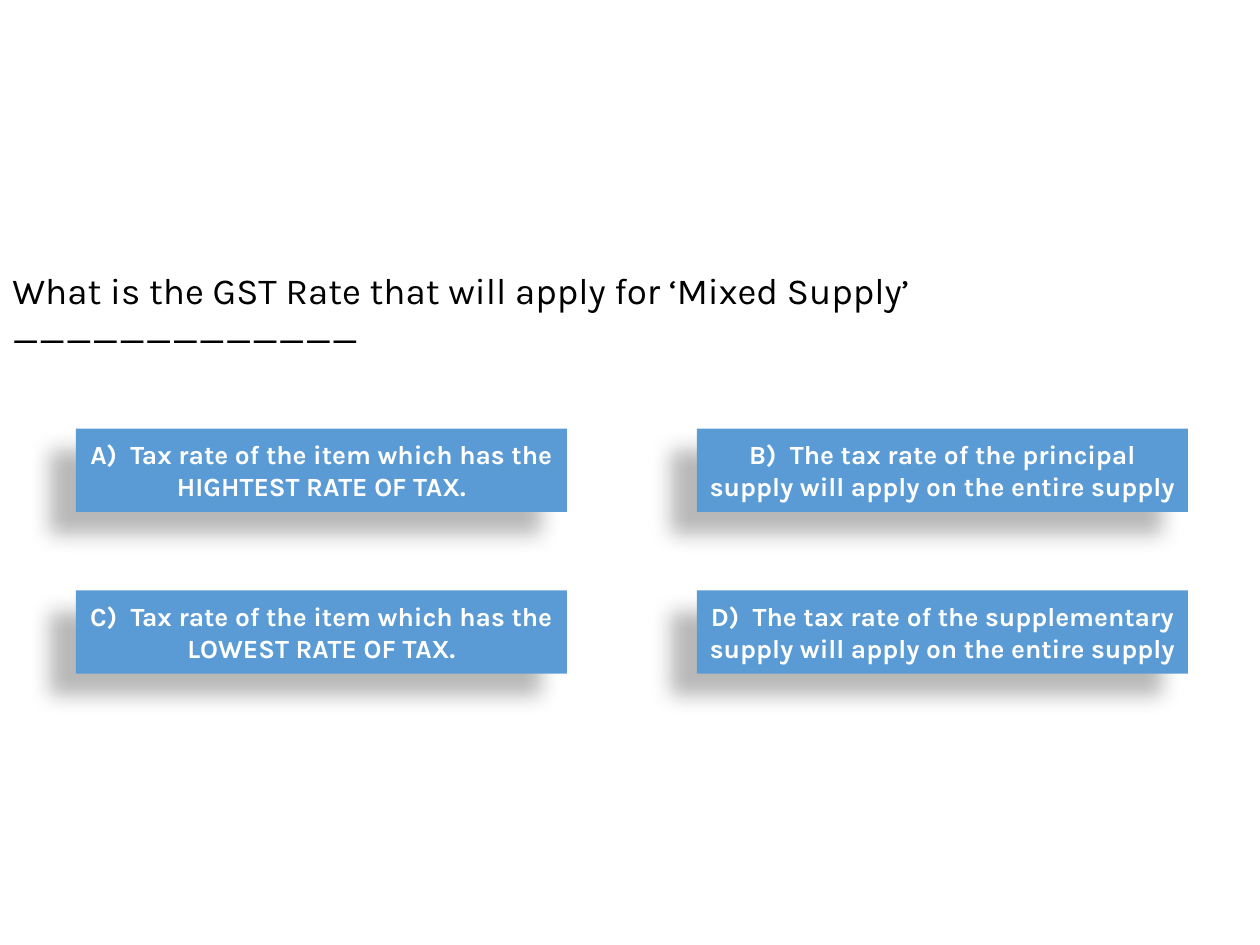
from lxml import etree
from pptx import Presentation
from pptx.dml.color import RGBColor
from pptx.enum import shapes, text
from pptx.oxml import ns
from pptx.util import Cm, Pt

QUESTION = "What is the GST Rate that will apply for ‘Mixed Supply’ _____________"
ANSWERS = [
    "A)  Tax rate of the item which has the HIGHTEST RATE OF TAX.",
    "B)  The tax rate of the principal supply will apply on the entire supply",
    "C)  Tax rate of the item which has the LOWEST RATE OF TAX.",
    "D)  The tax rate of the supplementary supply will apply on the entire supply",
]

FONT = "Karla"
BLACK = RGBColor(0x00, 0x00, 0x00)
WHITE = RGBColor(0xFF, 0xFF, 0xFF)
BLUE = RGBColor(0x5B, 0x9B, 0xD5)

COLUMNS = 2
LEFT, TOP = 1.53, 8.64
WIDTH, HEIGHT = 9.9, 1.68
COLUMN_STEP, ROW_STEP = 12.52, 3.26


def write(shape, content, size, color, bold=False):
    frame = shape.text_frame
    frame.word_wrap = True
    frame.vertical_anchor = text.MSO_ANCHOR.MIDDLE
    frame.text = content
    paragraph = frame.paragraphs[0]
    font = paragraph.runs[0].font
    font.name, font.size, font.bold = FONT, Pt(size), bold
    font.color.rgb = color
    return paragraph


def cast_shadow(shape):
    """Add a soft black shadow to the lower left."""
    shape.shadow.inherit = False
    effects = shape.fill._xPr.find(ns.qn("a:effectLst"))
    shadow = etree.SubElement(
        effects, ns.qn("a:outerShdw"), blurRad=str(Pt(11.8)),
        dist=str(Pt(19.7)), dir=str(141 * 60000), algn="ctr", rotWithShape="0")
    color = etree.SubElement(shadow, ns.qn("a:srgbClr"), val=str(BLACK))
    etree.SubElement(color, ns.qn("a:alpha"), val="28000")


def add_answer(slide, index, answer):
    row, column = divmod(index, COLUMNS)
    box = slide.shapes.add_shape(
        shapes.MSO_SHAPE.RECTANGLE,
        Cm(LEFT + column * COLUMN_STEP), Cm(TOP + row * ROW_STEP),
        Cm(WIDTH), Cm(HEIGHT))
    box.fill.solid()
    box.fill.fore_color.rgb = BLUE
    box.line.fill.background()
    cast_shadow(box)
    paragraph = write(box, answer, 15, WHITE, bold=True)
    paragraph.alignment = text.PP_ALIGN.CENTER


def main():
    presentation = Presentation()
    presentation.slide_width, presentation.slide_height = Cm(25.4), Cm(19.05)
    slide = presentation.slides.add_slide(presentation.slide_layouts[6])

    question = slide.shapes.add_textbox(Cm(0), Cm(4.7), Cm(25.4), Cm(3.18))
    write(question, QUESTION, 21, BLACK).line_spacing = 0.9
    for index, answer in enumerate(ANSWERS):
        add_answer(slide, index, answer)

    presentation.save("out.pptx")


if __name__ == "__main__":
    main()
